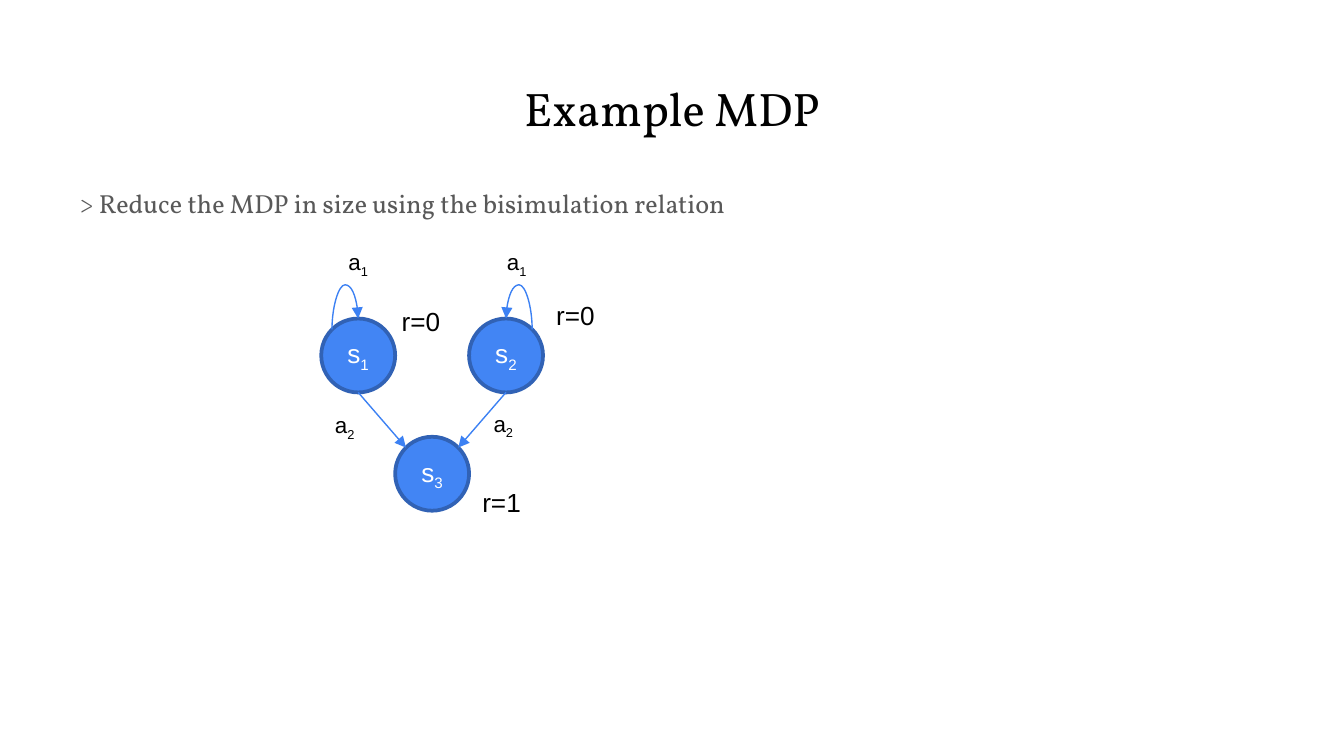
import dataclasses

import lxml.etree
import pptx
import pptx.dml.color
import pptx.enum.shapes
import pptx.enum.text
import pptx.oxml.ns
import pptx.util

Inches, Pt = pptx.util.Inches, pptx.util.Pt
RGB = pptx.dml.color.RGBColor.from_string
qn = pptx.oxml.ns.qn
ALIGN, ANCHOR = pptx.enum.text.PP_ALIGN, pptx.enum.text.MSO_ANCHOR
CONNECTOR = pptx.enum.shapes.MSO_CONNECTOR


@dataclasses.dataclass(frozen=True)
class Theme:
    serif: str = "Vollkorn"
    sans: str = "Arial"
    ink: str = "000000"
    grey: str = "595959"
    white: str = "FFFFFF"
    state: str = "4285F4"
    rim: str = "3162B5"
    arrow: str = "3C81F3"
    title_size: float = 25.2
    text_size: float = 14
    action_size: float = 12


theme = Theme()


def write(box, text, subscript, face, size, color, align):
    """Fill the first paragraph of a box, with an optional subscript run."""
    para = box.text_frame.paragraphs[0]
    para.alignment = align
    para.add_run().text = text
    if subscript:
        span = para.add_run()
        span.text = subscript
        span.font._element.set("baseline", "-25000")
    para.font.name, para.font.size = face, Pt(size)
    para.font.color.rgb = RGB(color)
    return para


def style_arrow(arrow):
    """Give a connector its colour, weight and arrowhead, and no shadow."""
    arrow.line.color.rgb = RGB(theme.arrow)
    arrow.line.width = Pt(0.75)
    properties = arrow._element.spPr
    lxml.etree.SubElement(properties.find(qn("a:ln")), qn("a:tailEnd"), type="triangle")
    lxml.etree.SubElement(properties, qn("a:effectLst"))


# A 16:9 page
deck = pptx.Presentation()
deck.slide_width, deck.slide_height = Inches(10), Inches(10 * 9 / 16)
page = deck.slides.add_slide(deck.slide_layouts[5])
margin, content_width = 0.34, 9.32

# Title
title = page.shapes.title
title.left, title.top = Inches(margin), Inches(0.49)
title.width, title.height = Inches(content_width), Inches(0.63)
frame = title.text_frame
frame.auto_size = pptx.enum.text.MSO_AUTO_SIZE.NONE
frame.vertical_anchor = ANCHOR.TOP
frame.margin_top = frame.margin_bottom = Inches(0.1)
write(title, "Example MDP", "", theme.serif, theme.title_size, theme.ink, ALIGN.CENTER)

# Body line
body = page.shapes.add_textbox(Inches(margin), Inches(1.26), Inches(content_width), Inches(3.74))
frame = body.text_frame
frame.word_wrap = True
frame.margin_left, frame.margin_top = Inches(0.25), Inches(0.1)
para = write(body, "> Reduce the MDP in size using the bisimulation relation", "",
             theme.serif, theme.text_size, theme.grey, ALIGN.LEFT)
para.line_spacing = 1.15

# States: one grid cell is as large as a circle
cell, left, top = 0.55, 2.39, 2.37
states = {"1": (0, 0), "2": (2, 0), "3": (1, 1.6)}
centers = {}
for number, (column, row) in states.items():
    x, y = left + column * cell, top + row * cell
    centers[number] = (x + cell / 2, y + cell / 2)
    circle = page.shapes.add_shape(pptx.enum.shapes.MSO_SHAPE.OVAL,
                                   Inches(x), Inches(y), Inches(cell), Inches(cell))
    circle.shadow.inherit = False
    circle.fill.solid()
    circle.fill.fore_color.rgb = RGB(theme.state)
    circle.line.color.rgb = RGB(theme.rim)
    circle.line.width = Pt(2)
    frame = circle.text_frame
    frame.margin_left = frame.margin_right = frame.margin_top = frame.margin_bottom = 0
    frame.vertical_anchor = ANCHOR.MIDDLE
    write(circle, "s", number, theme.sans, theme.text_size, theme.white, ALIGN.CENTER)

# Transitions: a straight arrow to s3 and a loop on the outer shoulder
radius = cell / 2
shoulder = radius * 0.5 ** 0.5
rise = radius - shoulder
goal_x, goal_y = centers["3"]
loops = {"1": (-1, 90, {"flipH": "1", "flipV": "1"}), "2": (1, 270, {"flipV": "1"})}
for number, (side, angle, flips) in loops.items():
    x, y = centers[number]
    arrow = page.shapes.add_connector(
        CONNECTOR.STRAIGHT, Inches(x), Inches(y + radius),
        Inches(goal_x + side * shoulder), Inches(goal_y - shoulder))
    style_arrow(arrow)

    middle_x, middle_y = x + side * shoulder / 2, y - radius + rise / 2
    loop = page.shapes.add_connector(
        CONNECTOR.CURVE, Inches(middle_x - rise / 2), Inches(middle_y - shoulder / 2),
        Inches(middle_x + rise / 2), Inches(middle_y + shoulder / 2))
    transform = loop._element.spPr.find(qn("a:xfrm"))
    transform.set("rot", str(angle * 60000))
    for name, value in flips.items():
        transform.set(name, value)
    guides = loop._element.spPr.find(qn("a:prstGeom")).get_or_add_avLst()
    lxml.etree.SubElement(guides, qn("a:gd"), name="adj1", fmla="val 410800")
    style_arrow(loop)

# Action and reward labels
action = (0.75, 0.3, theme.action_size, ALIGN.CENTER)
reward = (cell, 0.34, theme.text_size, ALIGN.LEFT)
labels = [
    ("a", "1", 2.29, 1.8, action),
    ("a", "2", 2.19, 3.01, action),
    ("a", "1", 3.47, 1.8, action),
    ("a", "2", 3.37, 3, action),
    ("r=0", "", 2.89, 2.22, reward),
    ("r=0", "", 4.04, 2.18, reward),
    ("r=1", "", 3.49, 3.57, reward),
]
for text, subscript, x, y, (width, height, size, align) in labels:
    box = page.shapes.add_textbox(Inches(x), Inches(y), Inches(width), Inches(height))
    box.text_frame.word_wrap = True
    box.text_frame.auto_size = pptx.enum.text.MSO_AUTO_SIZE.SHAPE_TO_FIT_TEXT
    write(box, text, subscript, theme.sans, size, theme.ink, align)

deck.save("out.pptx")
